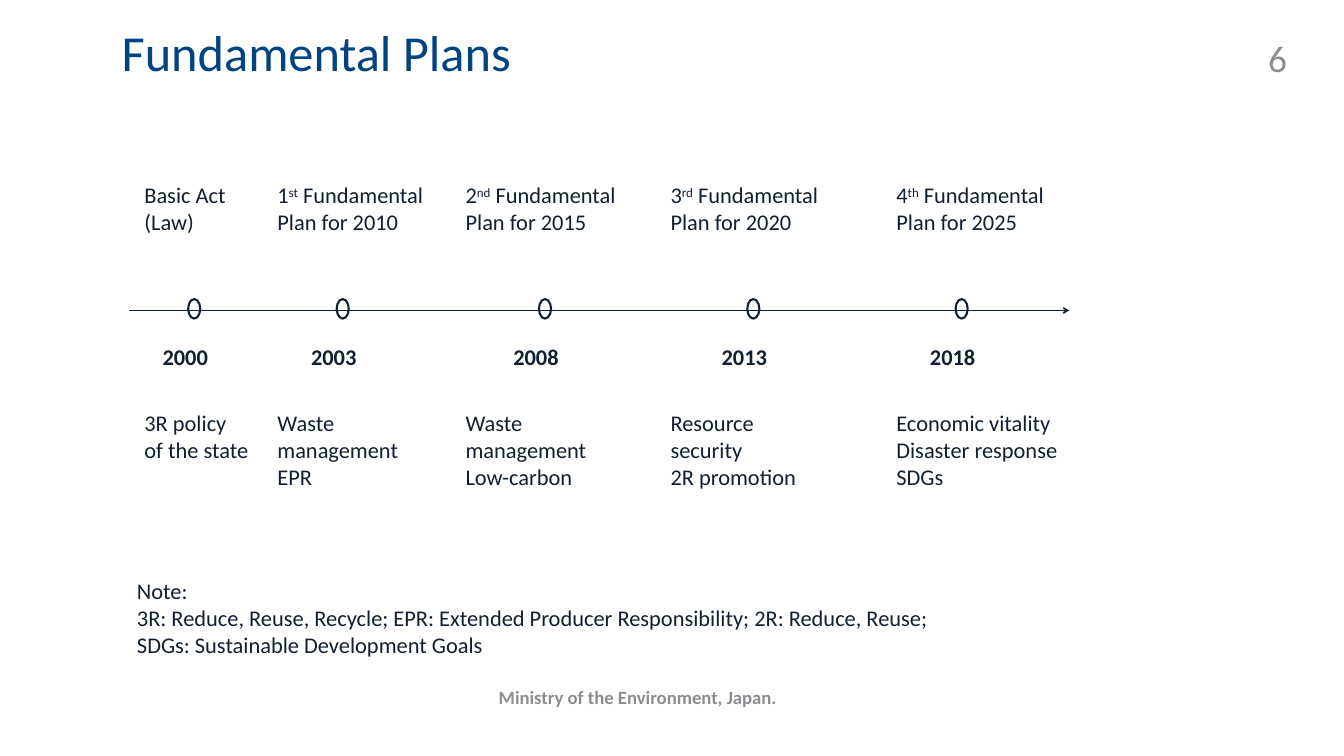
import dataclasses

import pptx
import pptx.dml.color
import pptx.enum.shapes
import pptx.enum.text
import pptx.oxml
import pptx.oxml.ns
import pptx.util

WIDTH, HEIGHT = pptx.util.Inches(20), pptx.util.Inches(11.25)
FONT = "Calibri"
INK, AXIS, BLUE, GREY = "111F33", "101E33", "004382", "8C8D90"

# Rows of the timeline, in percent of the slide height
HEADING_ROW, AXIS_ROW, YEAR_ROW, DETAIL_ROW, NOTE_ROW = 23.56, 41.07, 44.98, 53.69, 75.91
LINE_HEIGHT, BOX_PADDING = 3.74, 0.96
YEAR_WIDTH, MARKER_WIDTH, MARKER_HEIGHT = 4.55, 0.9, 2.58
MARKER_OFFSET = 2.85  # from the left of a year label to its marker's centre

Align = pptx.enum.text.PP_ALIGN
Anchor = pptx.enum.text.MSO_ANCHOR


@dataclasses.dataclass
class Milestone:
    year: str
    year_left: float
    text_left: float
    heading: list  # lines; a tuple holds number, ordinal suffix and rest
    heading_width: float
    details: list
    detail_width: float


MILESTONES = [
    Milestone("2000", 11.6, 10.25, ["Basic Act", "(Law)"], 7.7,
              ["3R policy", "of the state"], 9.05),
    Milestone("2003", 22.65, 20.15, [("1", "st", " Fundamental Plan for 2010")], 14,
              ["Waste", "management", "EPR"], 10.35),
    Milestone("2008", 37.7, 34.15, [("2", "nd", " Fundamental Plan for 2015")], 14,
              ["Waste", "management", "Low-carbon"], 10.35),
    Milestone("2013", 53.2, 49.4, [("3", "rd", " Fundamental Plan for 2020")], 14,
              ["Resource", "security", "2R promotion"], 10.4),
    Milestone("2018", 68.7, 66.2, [("4", "th", " Fundamental Plan for 2025")], 14,
              ["Economic vitality", "Disaster response", "SDGs"], 13.45),
]
NOTE = [
    "Note:",
    "3R: Reduce, Reuse, Recycle; EPR: Extended Producer Responsibility; 2R: Reduce, Reuse;",
    "SDGs: Sustainable Development Goals",
]


def color(value):
    return pptx.dml.color.RGBColor.from_string(value)


def across(percent):
    return int(WIDTH * percent / 100)


def down(percent):
    return int(HEIGHT * percent / 100)


def text_height(line_count):
    return BOX_PADDING + LINE_HEIGHT * line_count


def format_paragraph(paragraph, size, ink, bold=False, align=Align.LEFT):
    paragraph.alignment = align
    font = paragraph.font
    font.name, font.size, font.bold = FONT, pptx.util.Pt(size), bold
    font.color.rgb = color(ink)


def add_line_text(paragraph, line):
    """Write a plain line, or one whose second part is superscript."""
    parts = (line,) if isinstance(line, str) else line
    for index, part in enumerate(parts):
        run = paragraph.add_run()
        run.text = part
        if index == 1:
            run._r.get_or_add_rPr().set("baseline", "30000")


def add_text(slide, left, top, width, height, lines, size=24, ink=INK, bold=False,
             align=Align.LEFT, anchor=Anchor.TOP, wrap=True):
    box = slide.shapes.add_textbox(across(left), down(top), across(width), down(height))
    frame = box.text_frame
    frame.word_wrap, frame.vertical_anchor = wrap, anchor
    for index, line in enumerate(lines):
        paragraph = frame.add_paragraph() if index else frame.paragraphs[0]
        add_line_text(paragraph, line)
        format_paragraph(paragraph, size, ink, bold, align)
    return box


def add_title(slide, text):
    title = slide.shapes.title
    title.left, title.top = across(9.05), down(4.36)
    title.width, title.height = across(71.75), down(13.24)
    frame = title.text_frame
    frame.margin_left = frame.margin_right = frame.margin_top = frame.margin_bottom = 0
    frame.vertical_anchor = Anchor.TOP
    frame.auto_size = pptx.enum.text.MSO_AUTO_SIZE.NONE
    frame.text = text
    paragraph = frame.paragraphs[0]
    paragraph.line_spacing = 0.8
    format_paragraph(paragraph, 54, BLUE)


def add_axis(slide):
    axis = slide.shapes.add_connector(
        pptx.enum.shapes.MSO_CONNECTOR.STRAIGHT,
        across(9.6), down(AXIS_ROW), across(79.55), down(AXIS_ROW))
    axis.line.color.rgb = color(AXIS)
    axis.line.width = pptx.util.Pt(1.5)
    namespace = pptx.oxml.ns.nsdecls("a")
    axis.line._get_or_add_ln().append(
        pptx.oxml.parse_xml(f'<a:tailEnd {namespace} type="arrow"/>'))
    axis._element.spPr.append(pptx.oxml.parse_xml(f"<a:effectLst {namespace}/>"))


def add_marker(slide, center):
    marker = slide.shapes.add_shape(
        pptx.enum.shapes.MSO_SHAPE.OVAL,
        across(center - MARKER_WIDTH / 2), down(AXIS_ROW - 0.22 - MARKER_HEIGHT / 2),
        across(MARKER_WIDTH), down(MARKER_HEIGHT))
    marker.shadow.inherit = False
    marker.fill.background()
    marker.line.color.rgb = color(INK)
    marker.line.width = pptx.util.Pt(2.25)


def add_milestone(slide, milestone):
    add_text(slide, milestone.text_left, HEADING_ROW, milestone.heading_width,
             text_height(2), milestone.heading)
    add_marker(slide, milestone.year_left + MARKER_OFFSET)
    add_text(slide, milestone.year_left, YEAR_ROW, YEAR_WIDTH, text_height(1),
             [milestone.year], bold=True, wrap=False)
    add_text(slide, milestone.text_left, DETAIL_ROW, milestone.detail_width,
             text_height(len(milestone.details)), milestone.details, wrap=False)


def main():
    presentation = pptx.Presentation()
    presentation.slide_width, presentation.slide_height = WIDTH, HEIGHT
    slide = presentation.slides.add_slide(presentation.slide_layouts[5])

    # Title, footer and page number
    add_title(slide, "Fundamental Plans")
    add_text(slide, 9, 89.51, 76.9, 5.33, ["Ministry of the Environment, Japan."],
             20, GREY, bold=True, align=Align.CENTER, anchor=Anchor.MIDDLE)
    add_text(slide, 91.05, 4.89, 5.2, 5.33, ["6"],
             40, GREY, align=Align.RIGHT, anchor=Anchor.MIDDLE)

    # Timeline
    add_axis(slide)
    for milestone in MILESTONES:
        add_milestone(slide, milestone)

    # Abbreviations
    add_text(slide, 9.7, NOTE_ROW, 75.35, text_height(len(NOTE)), NOTE)

    presentation.save("out.pptx")


if __name__ == "__main__":
    main()
